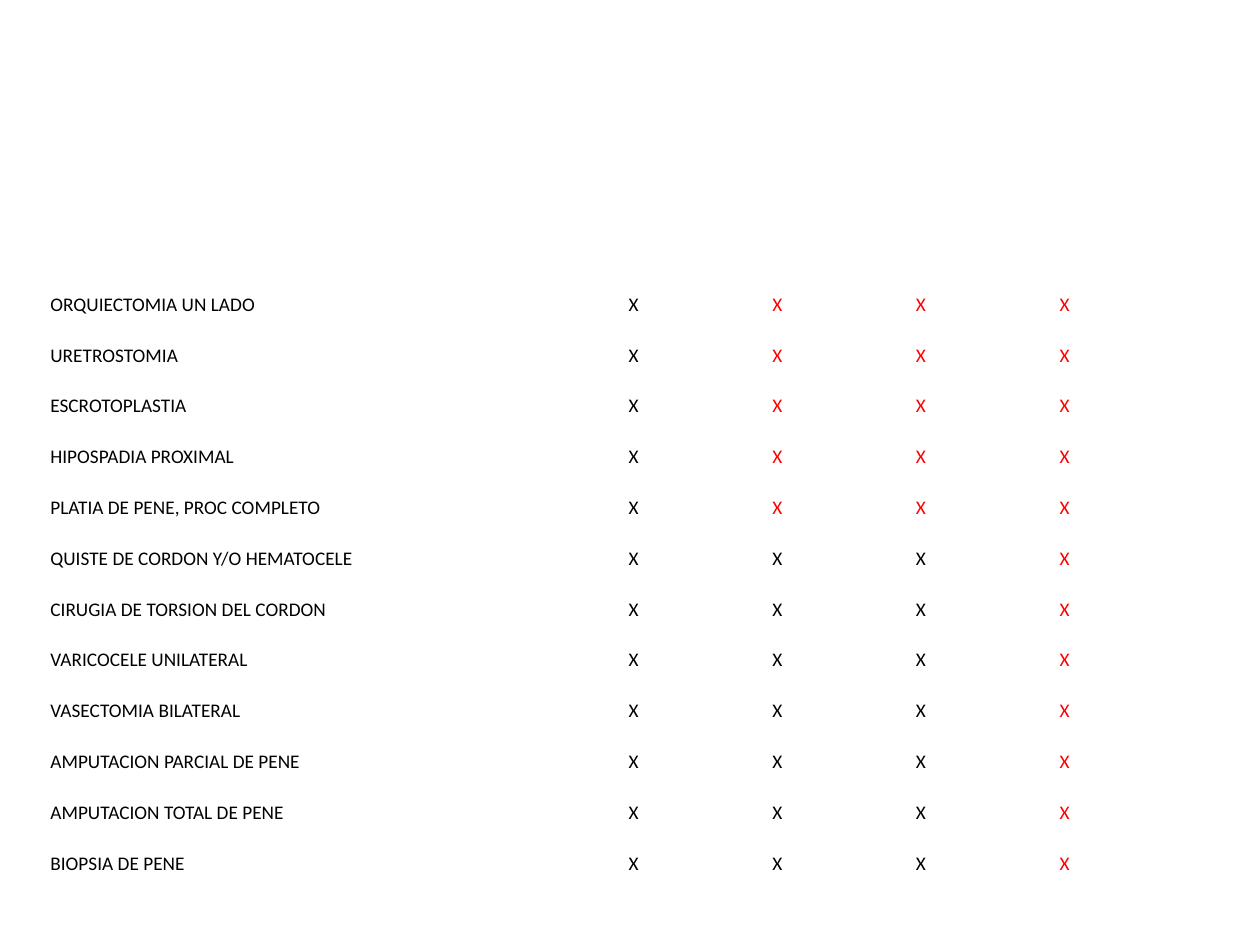
from pptx import Presentation
from pptx.dml.color import RGBColor
from pptx.enum.text import MSO_ANCHOR
from pptx.util import Inches, Pt

BLACK, RED = "000000", "FF0000"
BLANK_LAYOUT = 6

# Table grid, in inches
TABLE_LEFT, TABLE_TOP = 0.39, 2.11
TABLE_HEIGHT = 4.84
NAME_WIDTH, MARK_WIDTH = 4.59, 1.14
MARK_COLUMNS = 4

CELL_FORMAT = {
    "vertical_anchor": MSO_ANCHOR.BOTTOM,
    "margin_left": Inches(0.01),
    "margin_top": Inches(0.01),
    "margin_right": Inches(0.01),
    "margin_bottom": 0,
}
FONT_FORMAT = {"name": "Calibri", "size": Pt(11), "bold": False}

# Each procedure with the number of red marks that close its row
PROCEDURES = [
    ("ORQUIECTOMIA UN LADO", 3),
    ("URETROSTOMIA", 3),
    ("ESCROTOPLASTIA", 3),
    ("HIPOSPADIA PROXIMAL", 3),
    ("PLATIA DE PENE, PROC COMPLETO", 3),
    ("QUISTE DE CORDON Y/O HEMATOCELE", 1),
    ("CIRUGIA DE TORSION DEL CORDON", 1),
    ("VARICOCELE UNILATERAL", 1),
    ("VASECTOMIA BILATERAL", 1),
    ("AMPUTACION PARCIAL DE PENE", 1),
    ("AMPUTACION TOTAL DE PENE", 1),
    ("BIOPSIA DE PENE", 1),
]


def color(hex_value):
    return RGBColor.from_string(hex_value)


def apply_format(target, values):
    for attribute, value in values.items():
        setattr(target, attribute, value)


def fill_cell(cell, text, text_color):
    cell.fill.background()
    apply_format(cell, CELL_FORMAT)
    run = cell.text_frame.paragraphs[0].add_run()
    run.text = text
    apply_format(run.font, FONT_FORMAT)
    run.font.color.rgb = color(text_color)


def add_procedure_table(slide):
    widths = [NAME_WIDTH] + [MARK_WIDTH] * MARK_COLUMNS
    procedures = slide.shapes.add_table(
        len(PROCEDURES), len(widths),
        Inches(TABLE_LEFT), Inches(TABLE_TOP),
        Inches(sum(widths)), Inches(TABLE_HEIGHT),
    ).table
    apply_format(procedures, {"first_row": False, "horz_banding": False})

    for column, width in zip(procedures.columns, widths):
        column.width = Inches(width)

    for row, (name, red_marks) in zip(procedures.rows, PROCEDURES):
        black_marks = MARK_COLUMNS - red_marks
        texts = [name] + ["X"] * MARK_COLUMNS
        colors = [BLACK] * (1 + black_marks) + [RED] * red_marks
        for cell, text, text_color in zip(row.cells, texts, colors):
            fill_cell(cell, text, text_color)


def main():
    presentation = Presentation()
    presentation.slide_width = Inches(10)
    presentation.slide_height = Inches(7.5)
    slide = presentation.slides.add_slide(presentation.slide_layouts[BLANK_LAYOUT])
    add_procedure_table(slide)
    presentation.save("out.pptx")


if __name__ == "__main__":
    main()
